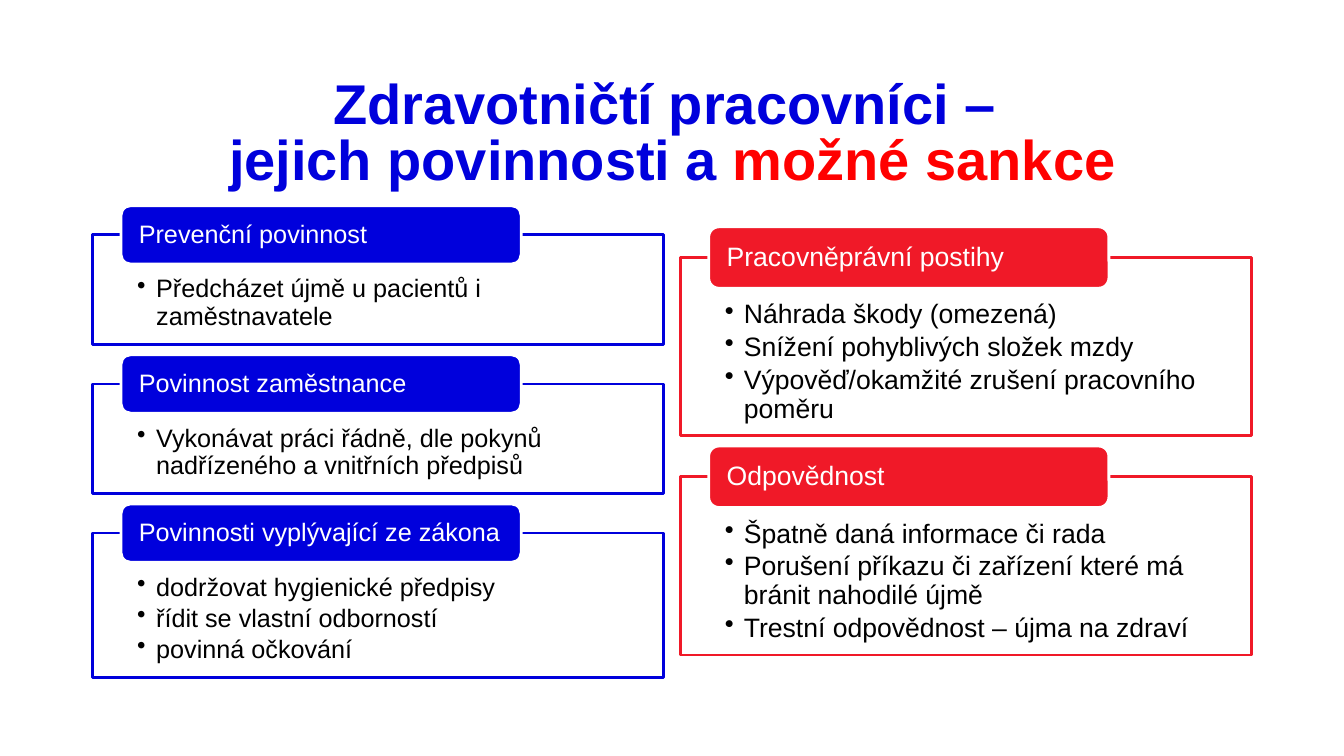
from dataclasses import dataclass

from lxml import etree
from pptx import Presentation
from pptx.dml.color import RGBColor
from pptx.enum.shapes import MSO_SHAPE
from pptx.enum.text import MSO_ANCHOR, MSO_AUTO_SIZE, PP_ALIGN
from pptx.oxml.ns import qn
from pptx.util import Inches, Pt

RECTANGLE, ROUNDED = MSO_SHAPE.RECTANGLE, MSO_SHAPE.ROUNDED_RECTANGLE
TOP, MIDDLE = MSO_ANCHOR.TOP, MSO_ANCHOR.MIDDLE
LEFT, CENTER = PP_ALIGN.LEFT, PP_ALIGN.CENTER
NO_AUTOFIT = MSO_AUTO_SIZE.NONE


@dataclass(frozen=True)
class Theme:
    font: str = "Arial"
    blue: str = "0000DC"
    red: str = "F01928"
    accent: str = "FF0000"
    white: str = "FFFFFF"
    black: str = "000000"
    title_size: int = 40
    duty_size: int = 18
    sanction_size: int = 19
    line_width: int = 2
    line_spacing: float = 0.9
    bullet_indent: float = 0.19


@dataclass(frozen=True)
class Column:
    """Places are percentages of the slide's width and height."""
    left: float
    top: float
    color: str
    size: int
    tab_height: float
    panels: tuple


class Page:
    PANEL_WIDTH = 42.5
    TAB_OFFSET = 2.1
    TAB_WIDTH = 29.78
    PANEL_GAP = 1.33

    def __init__(self, deck, theme):
        self.deck = deck
        self.theme = theme
        self.slide = deck.slides.add_slide(deck.slide_layouts[5])

    def across(self, percent):
        return round(self.deck.slide_width * percent / 100)

    def down(self, percent):
        return round(self.deck.slide_height * percent / 100)

    def area(self, left, top, width, height):
        return (self.across(left), self.down(top),
                self.across(width), self.down(height))

    def prepare(self, frame, anchor, side=0.0, top=0.0, bottom=0.0):
        """Set wrapping, anchor and insets of a text frame."""
        frame.word_wrap = True
        frame.auto_size = NO_AUTOFIT
        frame.vertical_anchor = anchor
        frame.margin_left = frame.margin_right = self.across(side)
        frame.margin_top, frame.margin_bottom = self.down(top), self.down(bottom)

    def span(self, para, text, size, color, bold=False):
        run = para.add_run()
        run.text = text
        run.font.name = self.theme.font
        run.font.size = Pt(size)
        run.font.bold = bold
        run.font.color.rgb = RGBColor.from_string(color)

    def bullet(self, para):
        properties = para._p.get_or_add_pPr()
        indent = Inches(self.theme.bullet_indent)
        properties.set("marL", str(indent))
        properties.set("indent", str(-indent))
        etree.SubElement(properties, qn("a:buChar"), char="•")

    def title(self, lines, highlight):
        box = self.slide.shapes.title
        box.left, box.top, box.width, box.height = self.area(5.92, 10.53, 88.2, 6.53)
        self.prepare(box.text_frame, TOP)
        para = box.text_frame.paragraphs[0]
        para.alignment = CENTER
        para.line_spacing = Pt(self.theme.title_size)
        for number, line in enumerate(lines):
            if number:
                para.add_line_break()
            self.span(para, line, self.theme.title_size, self.theme.blue, True)
        self.span(para, highlight, self.theme.title_size, self.theme.accent, True)

    def block(self, kind, area, fill, line):
        box = self.slide.shapes.add_shape(kind, *self.area(*area))
        box.shadow.inherit = False
        box.fill.solid()
        box.fill.fore_color.rgb = RGBColor.from_string(fill)
        box.line.color.rgb = RGBColor.from_string(line)
        box.line.width = Pt(self.theme.line_width)
        return box

    def body(self, column, top, height, items):
        area = (column.left, top, self.PANEL_WIDTH, height)
        frame = self.block(RECTANGLE, area, self.theme.white, column.color).text_frame
        self.prepare(frame, TOP, 3.3, column.tab_height * 0.707, 1.9)
        for number, item in enumerate(items):
            para = frame.add_paragraph() if number else frame.paragraphs[0]
            self.bullet(para)
            para.alignment = LEFT
            para.line_spacing = self.theme.line_spacing
            para.space_after = Pt(column.size * 0.15)
            self.span(para, item, column.size, self.theme.black)

    def tab(self, column, top, heading):
        area = (column.left + self.TAB_OFFSET, top, self.TAB_WIDTH, column.tab_height)
        frame = self.block(ROUNDED, area, column.color, self.theme.white).text_frame
        self.prepare(frame, MIDDLE, 1.12)
        para = frame.paragraphs[0]
        para.alignment = LEFT
        para.line_spacing = self.theme.line_spacing
        self.span(para, heading, column.size, self.theme.white)

    def stack(self, column):
        """Stack panels, each with its tab centred on the top edge."""
        top = column.top
        for heading, height, items in column.panels:
            body_top = top + column.tab_height / 2
            self.body(column, body_top, height, items)
            self.tab(column, top, heading)
            top = body_top + height + self.PANEL_GAP


def main():
    theme = Theme()
    deck = Presentation()
    deck.slide_width, deck.slide_height = Inches(13.33), Inches(7.5)
    page = Page(deck, theme)
    page.title(("Zdravotničtí pracovníci – ", "jejich povinnosti a "), "možné sankce")

    duties = (
        ("Prevenční povinnost", 14.53,
         ("Předcházet újmě u pacientů i zaměstnavatele",)),
        ("Povinnost zaměstnance", 14.53,
         ("Vykonávat práci řádně, dle pokynů nadřízeného a vnitřních předpisů",)),
        ("Povinnosti vyplývající ze zákona", 19.07,
         ("dodržovat hygienické předpisy",
          "řídit se vlastní odborností",
          "povinná očkování")),
    )
    sanctions = (
        ("Pracovněprávní postihy", 23.6,
         ("Náhrada škody (omezená)",
          "Snížení pohyblivých složek mzdy",
          "Výpověď/okamžité zrušení pracovního poměru")),
        ("Odpovědnost", 23.6,
         ("Špatně daná informace či rada",
          "Porušení příkazu či zařízení které má bránit nahodilé újmě",
          "Trestní odpovědnost – újma na zdraví")),
    )
    page.stack(Column(6.9, 27.2, theme.blue, theme.duty_size, 7.73, duties))
    page.stack(Column(50.63, 30, theme.red, theme.sanction_size, 8.13, sanctions))
    deck.save("out.pptx")


if __name__ == "__main__":
    main()
